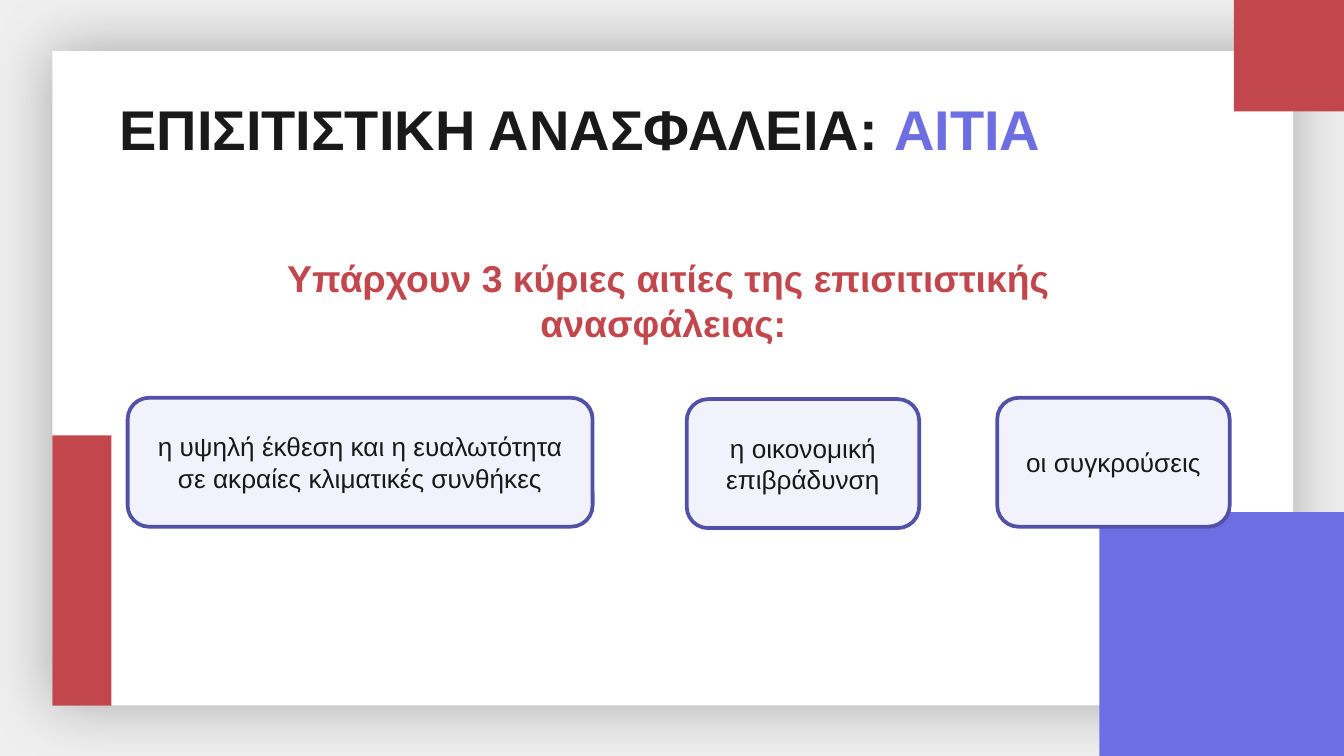
from lxml import etree
from pptx import Presentation
from pptx.dml.color import RGBColor
from pptx.enum.shapes import MSO_SHAPE
from pptx.enum.text import MSO_ANCHOR, PP_ALIGN
from pptx.oxml.ns import qn
from pptx.util import Inches, Pt

GREY = RGBColor(0xEF, 0xEF, 0xEF)
WHITE = RGBColor(0xFF, 0xFF, 0xFF)
BLUE = RGBColor(0x6E, 0x6E, 0xE3)
DARK_BLUE = RGBColor(0x51, 0x51, 0xA8)
PALE_BLUE = RGBColor(0xF2, 0xF2, 0xFC)
RED = RGBColor(0xC2, 0x47, 0x4C)
INK = RGBColor(0x19, 0x19, 0x19)

TITLE = [("ΕΠΙΣΙΤΙΣΤΙΚΗ ΑΝΑΣΦΑΛΕΙΑ: ", INK), ("ΑΙΤΙΑ", BLUE)]
INTRO = [("Υπάρχουν 3 κύριες αιτίες της επισιτιστικής ανασφάλειας: ", RED)]
# Text, left, top, width
CAUSES = [
    ("η υψηλή έκθεση και η ευαλωτότητα σε ακραίες κλιματικές συνθήκες", 0.95, 2.96, 3.46),
    ("η οικονομική επιβράδυνση", 5.11, 2.97, 1.73),
    ("οι συγκρούσεις", 7.42, 2.96, 1.73),
]
CAUSE_HEIGHT = 0.96
PANEL = (0.39, 0.38, 9.23, 4.87)
# Left, top, width, height, colour
BLOCKS = [
    (8.18, 3.81, 1.82, 1.82, BLUE),
    (9.18, 0, 0.82, 0.83, RED),
    (0.39, 3.24, 0.44, 2.01, RED),
]


def add_filled(page, kind, place, colour):
    box = page.shapes.add_shape(kind, *map(Inches, place))
    box.shadow.inherit = False
    box.fill.solid()
    box.fill.fore_color.rgb = colour
    box.line.fill.background()
    return box


def add_soft_shadow(box, blur, opacity):
    """Spread a black shadow evenly around the box; opacity is in percent."""
    effects = box._element.spPr.find(qn("a:effectLst"))
    shadow = etree.SubElement(effects, qn("a:outerShdw"), blurRad=str(Pt(blur)),
                              dist="0", dir="0", algn="ctr", rotWithShape="0")
    colour = etree.SubElement(shadow, qn("a:srgbClr"), val="000000")
    etree.SubElement(colour, qn("a:alpha"), val=str(opacity * 1000))


def write(para, spans, size, bold=False):
    for text, colour in spans:
        span = para.add_run()
        span.text = text
        span.font.name = "Arial"
        span.font.size = Pt(size)
        span.font.bold = bold
        span.font.color.rgb = colour


def add_heading(page, place, spans, size, anchor, align, bottom=0.1):
    box = page.shapes.add_textbox(*map(Inches, place))
    frame = box.text_frame
    frame.word_wrap = True
    frame.vertical_anchor = anchor
    frame.margin_left = frame.margin_right = frame.margin_top = Inches(0.1)
    frame.margin_bottom = Inches(bottom)
    para = frame.paragraphs[0]
    para.alignment = align
    write(para, spans, size, bold=True)
    return para


def add_cause(page, text, left, top, width):
    box = add_filled(page, MSO_SHAPE.ROUNDED_RECTANGLE,
                     (left, top, width, CAUSE_HEIGHT), PALE_BLUE)
    box.line.color.rgb = DARK_BLUE
    box.line.width = Pt(2)
    frame = box.text_frame
    frame.word_wrap = True
    frame.vertical_anchor = MSO_ANCHOR.MIDDLE
    para = frame.paragraphs[0]
    para.alignment = PP_ALIGN.CENTER
    write(para, [(text, INK)], 14)


def main():
    deck = Presentation()
    deck.slide_width = Inches(10)
    deck.slide_height = deck.slide_width * 9 // 16
    page = deck.slides.add_slide(deck.slide_layouts[6])
    page.background.fill.solid()
    page.background.fill.fore_color.rgb = GREY

    panel = add_filled(page, MSO_SHAPE.RECTANGLE, PANEL, WHITE)
    add_soft_shadow(panel, blur=33.8, opacity=30)
    for *place, colour in BLOCKS:
        add_filled(page, MSO_SHAPE.RECTANGLE, place, colour)

    intro = add_heading(page, (0.95, 1.99, 7.9, 0.82), INTRO, 20,
                        MSO_ANCHOR.MIDDLE, PP_ALIGN.CENTER, bottom=0.43)
    intro._p.get_or_add_pPr().set("marL", str(Inches(0.15)))
    add_heading(page, (0.79, 0.67, 8.43, 0.63), TITLE, 30,
                MSO_ANCHOR.BOTTOM, PP_ALIGN.LEFT)
    for cause in CAUSES:
        add_cause(page, *cause)
    deck.save("out.pptx")


if __name__ == "__main__":
    main()
